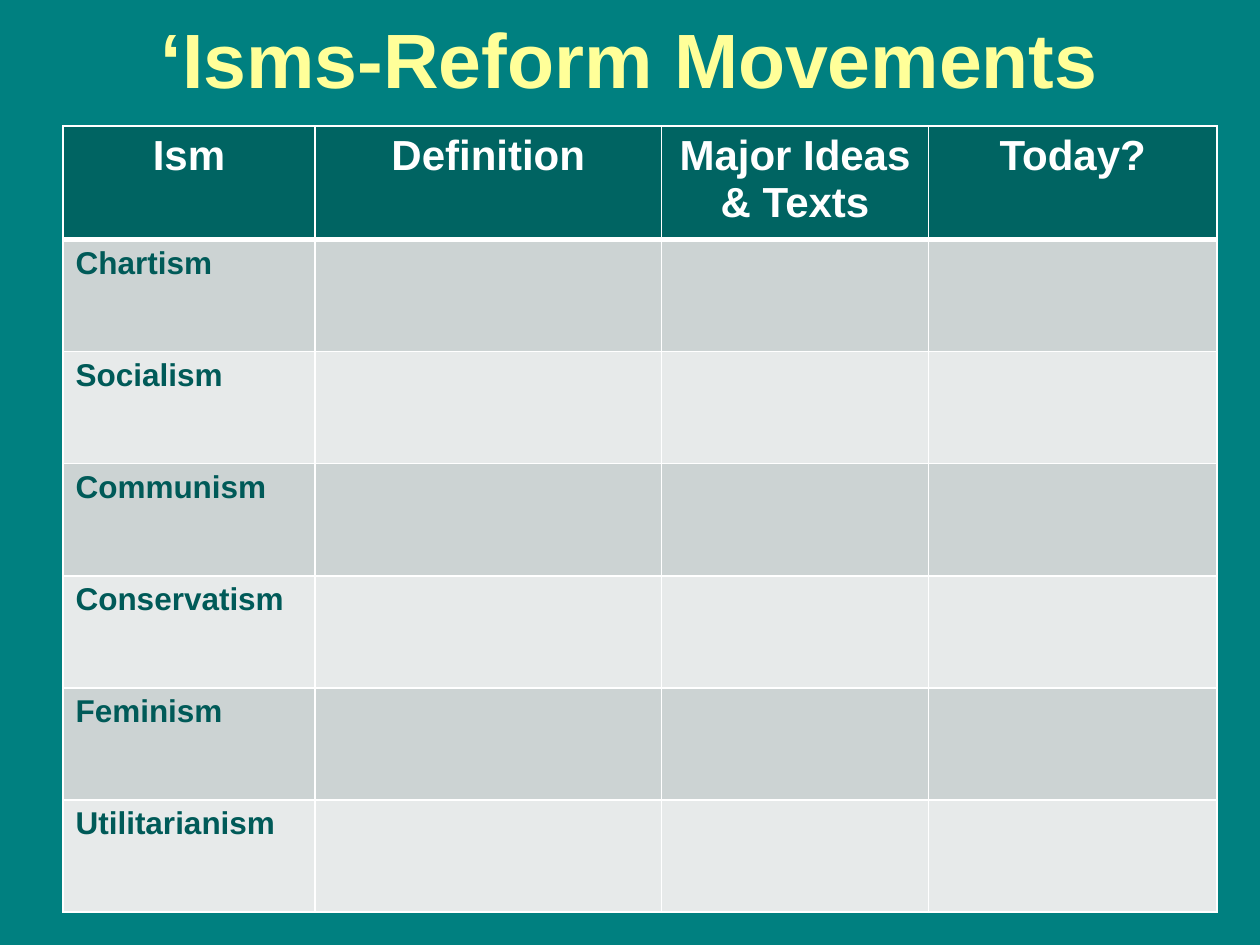
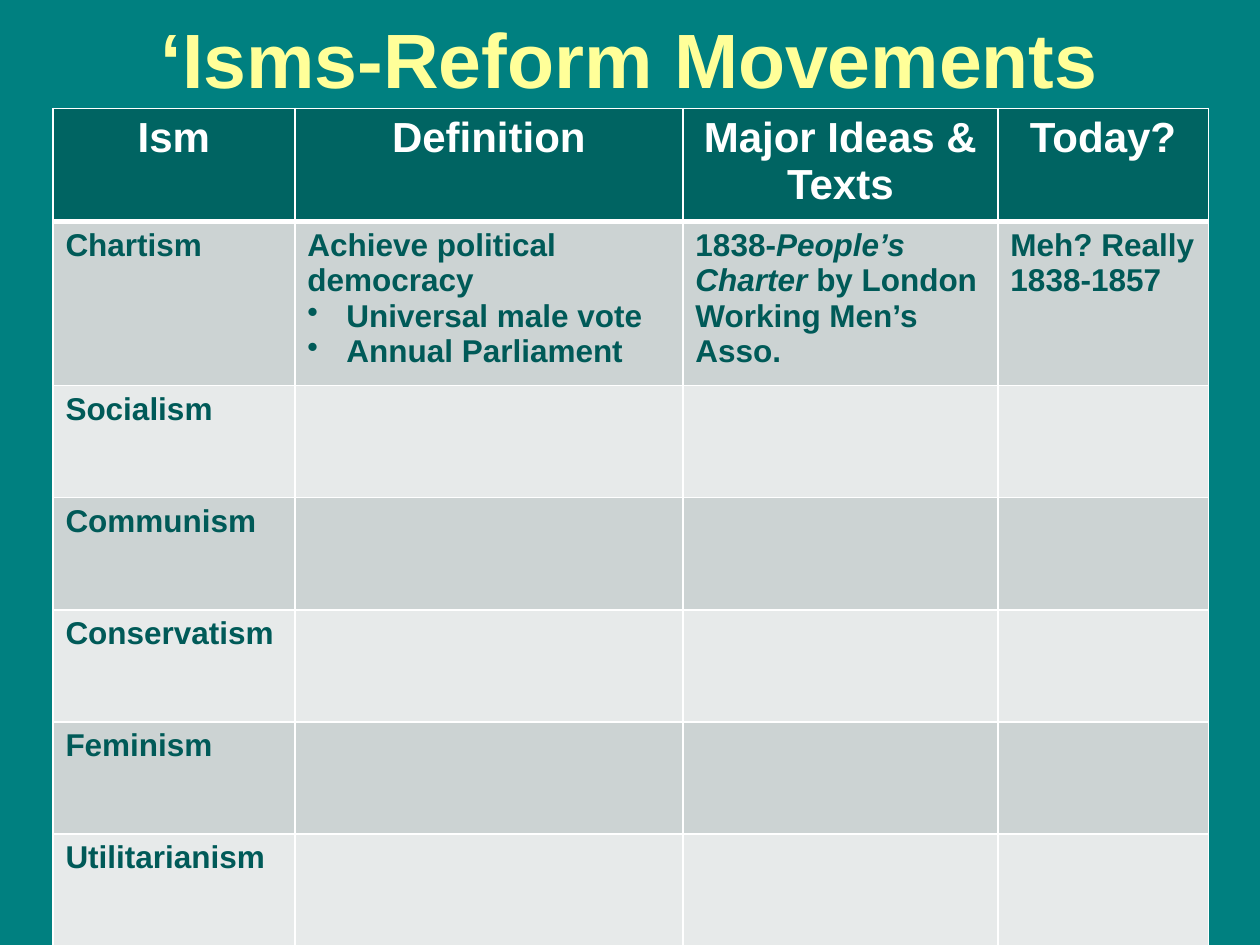
from lxml.etree import SubElement as Sub
from pptx import Presentation
from pptx.dml.color import RGBColor as Rgb
from pptx.enum.text import MSO_ANCHOR as Anchor, PP_ALIGN as Align
from pptx.oxml.ns import qn
from pptx.util import Inches, Pt

TEAL, CREAM, WHITE = "008080", "FFFF99", "FFFFFF"
HEAD, INK = "006462", "005A58"
BANDS = ["CCD3D3", "E7EAEA"]
FONT = "Arial"

TITLE = "‘Isms-Reform Movements"
HEADS = ["Ism", "Definition", "Major Ideas & Texts", "Today?"]
ISMS = ["Chartism", "Socialism", "Communism", "Conservatism", "Feminism", "Utilitarianism"]
CHART = [
    "Achieve political democracy\n• Universal male vote\n• Annual Parliament",
    "1838-_People’s Charter _by London Working Men’s Asso.",
    "Meh? Really 1838-1857",
]


def color(code):
    return Rgb.from_string(code)


class Deck:
    def __init__(self):
        self.prs = Presentation()
        self.prs.slide_width, self.prs.slide_height = Inches(10), Inches(7.5)
        self.slide = None

    def page(self, title):
        self.slide = self.prs.slides.add_slide(self.prs.slide_layouts[6])
        fill = self.slide.background.fill
        fill.solid()
        fill.fore_color.rgb = color(TEAL)
        box = self.slide.shapes.add_textbox(Inches(0.5), Inches(0.08), Inches(9), Inches(0.75))
        frame = box.text_frame
        frame.word_wrap = True
        frame.vertical_anchor = Anchor.MIDDLE
        self.label(frame.paragraphs[0], title, 44, CREAM, Align.CENTER)

    def label(self, para, text, size, ink, align=Align.LEFT):
        para.alignment = align
        font = para.font
        font.name, font.size, font.bold = FONT, Pt(size), True
        font.color.rgb = color(ink)
        for i, part in enumerate(text.split("_")):
            if part:
                run = para.add_run()
                run.text = part
                if i % 2:
                    run.font.italic = True

    def bullet(self, para):
        props = para._p.get_or_add_pPr()
        props.set("marL", str(Inches(0.31)))
        props.set("indent", str(-Inches(0.31)))
        mark = props.makeelement(qn("a:buChar"), {"char": "•"})
        props.insert(0, mark)

    def border(self, cell, top, base):
        props = cell._tc.get_or_add_tcPr()
        for side, width in zip("LRTB", (1, 1, top, base)):
            line = Sub(props, qn(f"a:ln{side}"), w=str(Pt(width)))
            fill = Sub(line, qn("a:solidFill"))
            Sub(fill, qn("a:srgbClr"), val=WHITE)

    def cell(self, cell, text, row):
        self.border(cell, 3 if row == 1 else 1, 1 if row else 3)
        cell.fill.solid()
        cell.fill.fore_color.rgb = color(BANDS[(row - 1) % 2] if row else HEAD)
        style = (18, INK) if row else (24, WHITE, Align.CENTER)
        frame = cell.text_frame
        for i, line in enumerate(text.split("\n")):
            para = frame.add_paragraph() if i else frame.paragraphs[0]
            self.label(para, line.removeprefix("• "), *style)
            if line.startswith("• "):
                self.bullet(para)

    def table(self, left, top, widths, heights, rows):
        frame = self.slide.shapes.add_table(
            len(rows), len(widths), Inches(left), Inches(top),
            Inches(sum(widths)), Inches(sum(heights)))
        grid = frame.table
        for col, width in zip(grid.columns, widths):
            col.width = Inches(width)
        for r, (height, texts) in enumerate(zip(heights, rows)):
            grid.rows[r].height = Inches(height)
            for c, text in enumerate(texts):
                self.cell(grid.cell(r, c), text, r)


def main():
    deck = Deck()
    blank = [HEADS] + [[ism, "", "", ""] for ism in ISMS]
    deck.page(TITLE)
    deck.table(0.5, 1, [2, 2.75, 2.12, 2.29], [0.9] + [0.89] * 6, blank)

    first = [ISMS[0], *CHART]
    deck.page(TITLE)
    deck.table(0.42, 0.86, [1.92, 3.08, 2.5, 1.67], [0.9, 1.3] + [0.89] * 5,
               [HEADS, first] + blank[2:])
    deck.prs.save("out.pptx")


if __name__ == "__main__":
    main()
